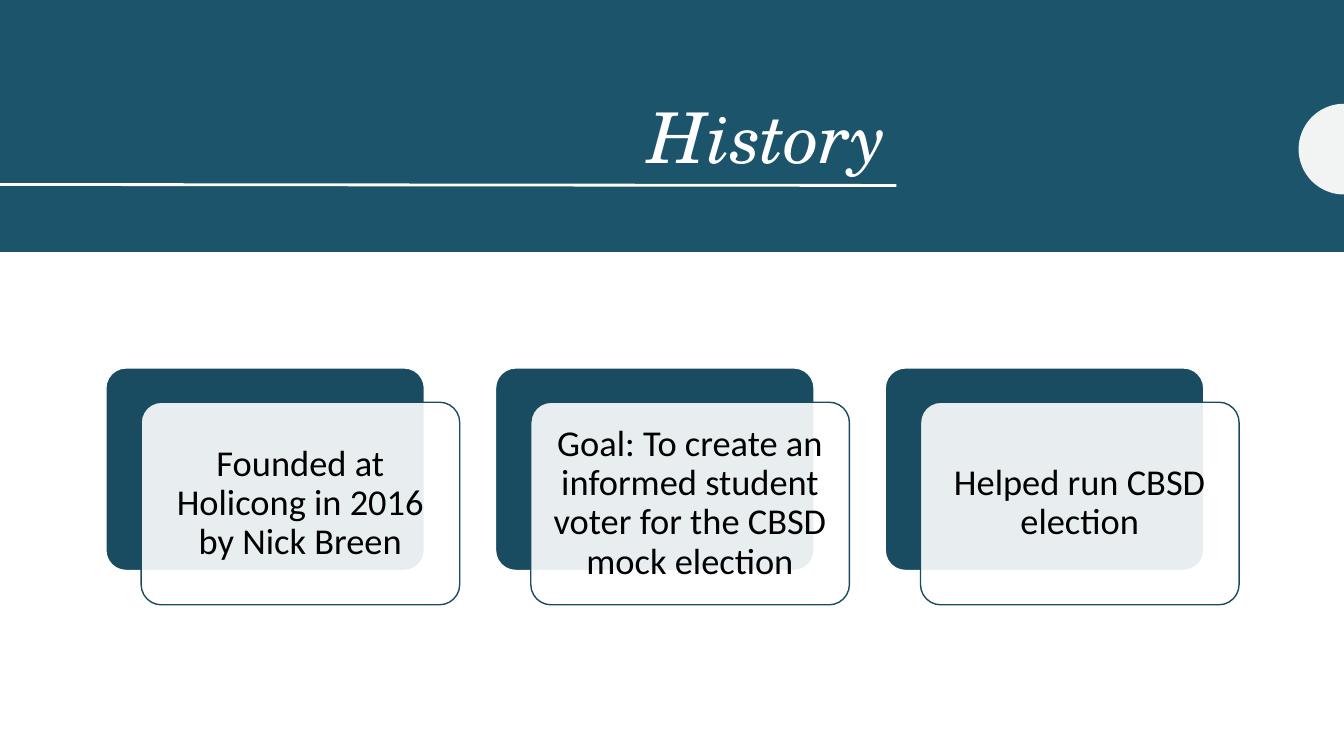
from math import cos, pi, sin

from lxml import etree
from pptx import Presentation
from pptx.dml.color import RGBColor
from pptx.enum.shapes import MSO_CONNECTOR, MSO_SHAPE
from pptx.enum.text import MSO_ANCHOR, PP_ALIGN
from pptx.oxml.ns import qn
from pptx.util import Inches, Pt

RECT = MSO_SHAPE.RECTANGLE
ROUND = MSO_SHAPE.ROUNDED_RECTANGLE
STRAIGHT = MSO_CONNECTOR.STRAIGHT
MIDDLE, BOTTOM = MSO_ANCHOR.MIDDLE, MSO_ANCHOR.BOTTOM
CENTER, RIGHT = PP_ALIGN.CENTER, PP_ALIGN.RIGHT
WIDE, HIGH = 13.33, 7.5


def color(code):
    return RGBColor.from_string(code)


class Deck:
    teal = "1C546B"
    navy = "194C61"
    white = "FFFFFF"
    pale = "F2F3F3"
    black = "000000"
    serif = "TeX Gyre Schola"
    sans = "Calibri"

    def __init__(self, slide):
        self.shapes = slide.shapes

    def paint(self, shape, fill, line=None, alpha=None):
        shape.shadow.inherit = False
        shape.fill.solid()
        shape.fill.fore_color.rgb = color(fill)
        if alpha:
            tone = shape.fill._xPr.find(qn("a:solidFill"))[0]
            etree.SubElement(tone, qn("a:alpha")).set("val", str(alpha * 1000))
        if line:
            shape.line.color.rgb = color(line)
            shape.line.width = Pt(1)
        else:
            shape.line.fill.background()

    def box(self, kind, x, y, w, h, fill, line=None, alpha=None):
        shape = self.shapes.add_shape(kind, Inches(x), Inches(y), Inches(w), Inches(h))
        if kind == ROUND:
            shape.adjustments[0] = 0.1
        self.paint(shape, fill, line, alpha)

    def half(self, x, y, r, fill):
        steps = 48
        turns = [pi / 2 + pi * i / steps for i in range(steps + 1)]
        points = [(Inches(x + r * cos(t)), Inches(y - r * sin(t))) for t in turns]
        path = self.shapes.build_freeform(*points[0])
        path.add_line_segments(points[1:], close=True)
        self.paint(path.convert_to_shape(), fill)

    def rule(self, x1, y1, x2, y2, line):
        rule = self.shapes.add_connector(STRAIGHT, Inches(x1), Inches(y1), Inches(x2), Inches(y2))
        rule.line.color.rgb = color(line)
        rule.line.width = Pt(2)
        etree.SubElement(rule._element.spPr, qn("a:effectLst"))

    def text(self, words, x, y, w, h, size, font, ink, align, anchor, pad, slant=False):
        frame = self.shapes.add_textbox(Inches(x), Inches(y), Inches(w), Inches(h)).text_frame
        frame.word_wrap = True
        frame.vertical_anchor = anchor
        frame.margin_left = frame.margin_right = Inches(pad[0])
        frame.margin_top = frame.margin_bottom = Inches(pad[1])
        para = frame.paragraphs[0]
        para.alignment = align
        para.line_spacing = 0.9
        run = para.add_run()
        run.text = words
        run.font.size = Pt(size)
        run.font.name = font
        run.font.italic = slant
        run.font.color.rgb = color(ink)

    def card(self, words, x, y):
        w, h = 3.16, 2.01
        self.box(ROUND, x, y, w, h, self.navy, self.white)
        x, y = x + 0.35, y + 0.34
        self.box(ROUND, x, y, w, h, self.white, self.navy, 90)
        self.text(words, x + 0.06, y + 0.06, w - 0.12, h - 0.12, 26, self.sans,
                  self.black, CENTER, MIDDLE, (0.11, 0.11))


def main():
    show = Presentation()
    show.slide_width, show.slide_height = Inches(WIDE), Inches(HIGH)
    deck = Deck(show.slides.add_slide(show.slide_layouts[6]))

    deck.box(RECT, 0, 0, WIDE, 2.5, deck.teal)
    deck.half(WIDE, 1.48, 0.45, deck.pale)
    deck.rule(0, 1.83, 8.89, 1.84, deck.white)
    deck.text("History", 1.05, 0.47, 7.84, 1.35, 50, deck.serif,
              deck.white, RIGHT, BOTTOM, (0.1, 0.05), True)

    facts = [
        "Founded at Holicong in 2016 by Nick Breen",
        "Goal: To create an informed student voter for the CBSD mock election",
        "Helped run CBSD election",
    ]
    for i, fact in enumerate(facts):
        deck.card(fact, 1.05 + 3.865 * i, 3.65)

    show.save("out.pptx")


if __name__ == "__main__":
    main()
